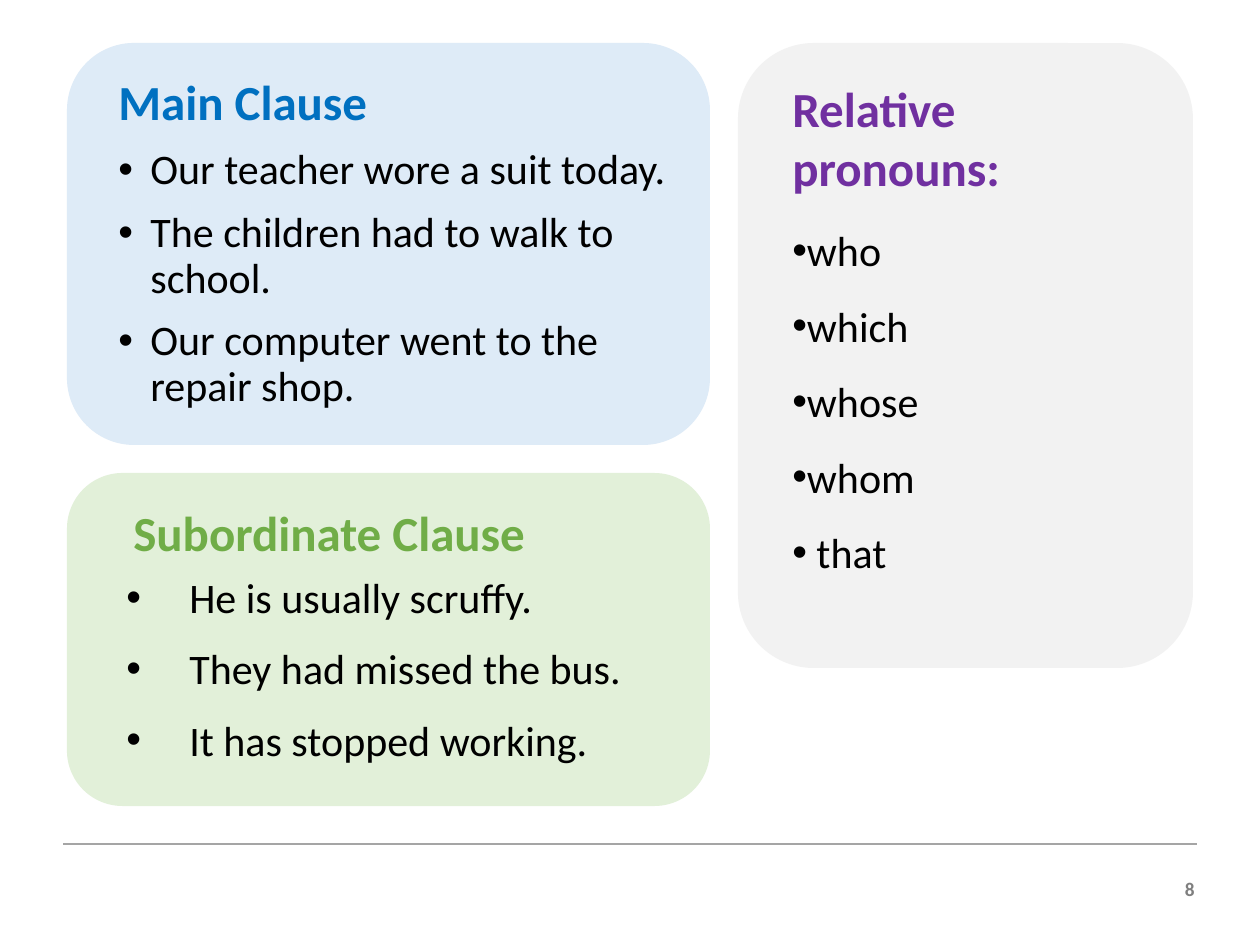
from lxml.etree import SubElement
from pptx import Presentation
from pptx.dml.color import RGBColor
from pptx.enum.shapes import MSO_CONNECTOR, MSO_SHAPE
from pptx.enum.text import MSO_AUTO_SIZE, PP_ALIGN
from pptx.oxml.ns import qn
from pptx.util import Emu, Pt

PX = 914400 / 126  # EMU in one pixel
BLACK = "000000"


def px(length):
    return Emu(round(length * PX))


def rgb(hex_code):
    return RGBColor.from_string(hex_code)


def add_panel(slide, box, color):
    panel = slide.shapes.add_shape(MSO_SHAPE.ROUNDED_RECTANGLE, *map(px, box))
    panel.shadow.inherit = False
    panel.fill.solid()
    panel.fill.fore_color.rgb = rgb(color)
    panel.line.fill.background()


def add_text_frame(slide, box, inset):
    """Open a text box at inset (left, top, width, height) within box."""
    left, top, width, height = inset
    area = (box[0] + left, box[1] + top, width, height)
    frame = slide.shapes.add_textbox(*map(px, area)).text_frame
    frame.word_wrap = True
    frame.auto_size = MSO_AUTO_SIZE.NONE
    return frame


def add_run(paragraph, text, size, color, bold=False):
    run = paragraph.add_run()
    run.text = text
    run.font.name = "Calibri"
    run.font.size = Pt(size)
    run.font.bold = bold
    run.font.color.rgb = rgb(color)


def set_indent(paragraph, margin, hanging):
    properties = paragraph._p.get_or_add_pPr()
    properties.set("marL", str(px(margin)))
    properties.set("indent", str(-px(hanging)))
    return properties


def set_bullet(paragraph, margin, hanging):
    properties = set_indent(paragraph, margin, hanging)
    bullet_color = SubElement(properties, qn("a:buClr"))
    SubElement(bullet_color, qn("a:srgbClr"), val=BLACK)
    SubElement(properties, qn("a:buFont"), typeface="Arial")
    SubElement(properties, qn("a:buChar"), char="•")


def add_examples(frame, examples, margin, hanging, **spacing):
    for example in examples:
        paragraph = frame.paragraphs[0]
        if paragraph.runs:
            paragraph = frame.add_paragraph()
        set_bullet(paragraph, margin, hanging)
        for name, value in spacing.items():
            setattr(paragraph, name, value)
        add_run(paragraph, example, 24, BLACK)


def add_main_clause(slide, box):
    add_panel(slide, box, "DEEBF7")
    frame = add_text_frame(slide, box, (39, 29, 577, 355))
    heading = frame.paragraphs[0]
    set_indent(heading, 32, 32)
    heading.line_spacing = 0.9
    add_run(heading, "Main Clause", 28, "0070C0", bold=True)
    add_examples(frame, [
        "Our teacher wore a suit today.",
        "The children had to walk to school.",
        "Our computer went to the repair shop.",
    ], 32, 32, line_spacing=0.9, space_before=Pt(10))


def add_subordinate_clause(slide, box):
    add_panel(slide, box, "E2F0D9")
    frame = add_text_frame(slide, box, (39, 23, 566, 290))
    heading = frame.paragraphs[0]
    set_indent(heading, 50, 35)
    heading.space_after = Pt(6)
    add_run(heading, "Subordinate Clause", 28, "70AD47", bold=True)
    add_examples(frame, [
        "He is usually scruffy.",
        "They had missed the bus.",
        "It has stopped working.",
    ], 71, 63, space_after=Pt(12))


def add_relative_pronouns(slide, box):
    add_panel(slide, box, "F2F2F2")
    pronouns = add_text_frame(slide, box, (42, 150, 413, 394))
    add_examples(pronouns, ["who", "which", "whose", "whom", " that"],
                 0, 18, line_spacing=1.5)
    heading = add_text_frame(slide, box, (42, 29, 413, 131)).paragraphs[0]
    add_run(heading, "Relative", 28, "7030A0", bold=True)
    heading.add_line_break()
    add_run(heading, "pronouns:", 28, "7030A0", bold=True)


def add_footer(slide, box):
    left, top, width, _ = box
    rule = slide.shapes.add_connector(
        MSO_CONNECTOR.STRAIGHT, px(left), px(top), px(left + width), px(top))
    rule.line.color.rgb = rgb("A5A5A5")
    rule.line.width = Pt(0.75)
    SubElement(rule._element.spPr, qn("a:effectLst"))
    number = add_text_frame(slide, box, (1096, 27, 48, 37)).paragraphs[0]
    number.alignment = PP_ALIGN.RIGHT
    add_run(number, "8", 11, "7F7F7F", bold=True)


def main():
    deck = Presentation()
    deck.slide_width, deck.slide_height = px(1260), px(945)
    slide = deck.slides.add_slide(deck.slide_layouts[6])

    # Rule and page number
    add_footer(slide, (63, 844, 1134, 64))
    # Right column
    add_relative_pronouns(slide, (738, 43, 455, 625))
    # Left column
    add_main_clause(slide, (67, 43, 643, 402))
    add_subordinate_clause(slide, (67, 473, 643, 333))

    deck.save("out.pptx")


if __name__ == "__main__":
    main()
